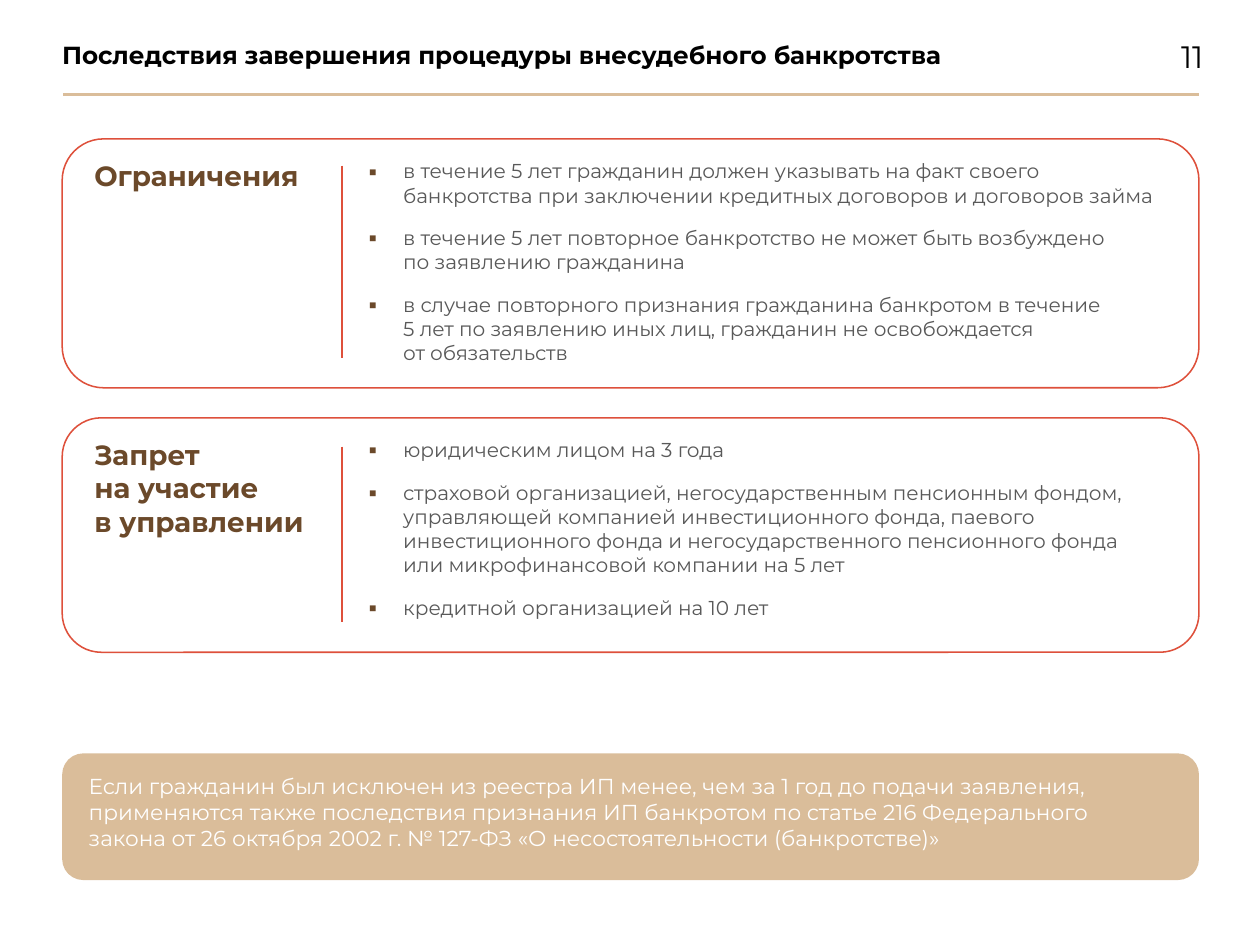
from lxml import etree
from pptx import Presentation
from pptx.dml.color import RGBColor
from pptx.enum.shapes import MSO_CONNECTOR, MSO_SHAPE
from pptx.oxml.ns import qn
from pptx.util import Cm, Inches, Pt

ROUNDED = MSO_SHAPE.ROUNDED_RECTANGLE
STRAIGHT = MSO_CONNECTOR.STRAIGHT

# Content
TITLE = "Последствия завершения процедуры внесудебного банкротства"
PAGE = "11"
CARDS = [  # top, height, divider top and bottom, heading, bullets
    (1.25, 2.24, 1.49, 3.22, "Ограничения", [
        "в течение 5 лет гражданин должен указывать на факт своего "
        "банкротства при заключении кредитных договоров и договоров займа",
        "в течение 5 лет повторное банкротство не может быть возбуждено \n"
        "по заявлению гражданина",
        "в случае повторного признания гражданина банкротом в течение \n"
        "5 лет по заявлению иных лиц, гражданин не освобождается \n"
        "от обязательств",
    ]),
    (3.76, 2.11, 4.02, 5.6, "Запрет \nна участие \nв управлении", [
        "юридическим лицом на 3 года",
        "страховой организацией, негосударственным пенсионным фондом, \n"
        "управляющей компанией инвестиционного фонда, паевого "
        "инвестиционного фонда и негосударственного пенсионного фонда "
        "или микрофинансовой компании на 5 лет",
        "кредитной организацией на 10 лет",
    ]),
]
NOTE = ("Если гражданин был исключен из реестра ИП менее, чем за 1 год до подачи "
        "заявления, применяются также последствия признания ИП банкротом по статье "
        "216 Федерального закона от 26 октября 2002 г. № 127-ФЗ "
        "«О несостоятельности (банкротстве)»")

# Style
FONT = "Montserrat"
BLACK, WHITE, GREY = "000000", "FFFFFF", "595959"
RED, SAND, BROWN = "DE503B", "DABD9A", "6B492A"
LEFT, WIDTH = 0.56, 10.23
TEXT_DROP = 0.13  # from the top of a panel to its text box
HEADING_X, DIVIDER_X, BULLETS_X = 0.75, 3.08, 3.22

prs = Presentation()
prs.slide_width, prs.slide_height = Cm(28.8), Cm(21.6)
slide = prs.slides.add_slide(prs.slide_layouts[6])


def rgb(color):
    return RGBColor.from_string(color)


def add_text(x, y, w, h, paragraphs, size, color, bold=False, wrap=True):
    box = slide.shapes.add_textbox(Inches(x), Inches(y), Inches(w), Inches(h))
    frame = box.text_frame
    frame.word_wrap = wrap
    for i, words in enumerate(paragraphs):
        paragraph = frame.add_paragraph() if i else frame.paragraphs[0]
        paragraph.text = words
        for run in paragraph.runs:
            run.font.name, run.font.size, run.font.bold = FONT, Pt(size), bold
            run.font.color.rgb = rgb(color)
    return frame


def add_bullets(frame):
    for paragraph in frame.paragraphs:
        paragraph.space_after = Pt(12)
        props = paragraph._p.get_or_add_pPr()
        props.set("marL", str(Inches(0.31)))
        props.set("indent", str(-Inches(0.31)))
        bullet_color = etree.SubElement(props, qn("a:buClr"))
        etree.SubElement(bullet_color, qn("a:srgbClr"), val=BROWN)
        etree.SubElement(props, qn("a:buFont"), typeface=FONT)
        etree.SubElement(props, qn("a:buChar"), char="▪")


def add_panel(y, h, fill, outline=None):
    panel = slide.shapes.add_shape(ROUNDED, Inches(LEFT), Inches(y), Inches(WIDTH), Inches(h))
    panel.shadow.inherit = False
    panel.fill.solid()
    panel.fill.fore_color.rgb = rgb(fill)
    if outline:
        panel.line.color.rgb = rgb(outline)
        panel.line.width = Pt(1)
    else:
        panel.line.fill.background()


def add_line(x1, y1, x2, y2, color):
    line = slide.shapes.add_connector(STRAIGHT, Inches(x1), Inches(y1), Inches(x2), Inches(y2))
    line.line.color.rgb = rgb(color)
    line.line.width = Pt(1.5)
    etree.SubElement(line._element.spPr, qn("a:effectLst"))


# Header
add_text(0.46, 0.31, 9.41, 0.37, [TITLE], 16, BLACK, bold=True)
add_text(10.53, 0.29, 0.41, 0.44, [PAGE], 20, BLACK, wrap=False)
add_line(0.57, 0.85, LEFT + WIDTH, 0.85, SAND)

# Cards with a heading, a divider and bullets
for top, height, line_top, line_bottom, heading, bullets in CARDS:
    add_panel(top, height, WHITE, RED)
    text_y = top + TEXT_DROP
    add_text(HEADING_X, text_y, 2.48, 0.4, [heading], 18, BROWN, bold=True)
    add_line(DIVIDER_X, line_top, DIVIDER_X, line_bottom, RED)
    add_bullets(add_text(BULLETS_X, text_y, 7.32, height - 2 * TEXT_DROP, bullets, 13, GREY))

# Note
NOTE_TOP = 6.78
add_panel(NOTE_TOP, 1.14, SAND)
add_text(0.7, NOTE_TOP + TEXT_DROP, 9.85, 0.81, [NOTE], 14, WHITE)

prs.save("out.pptx")
